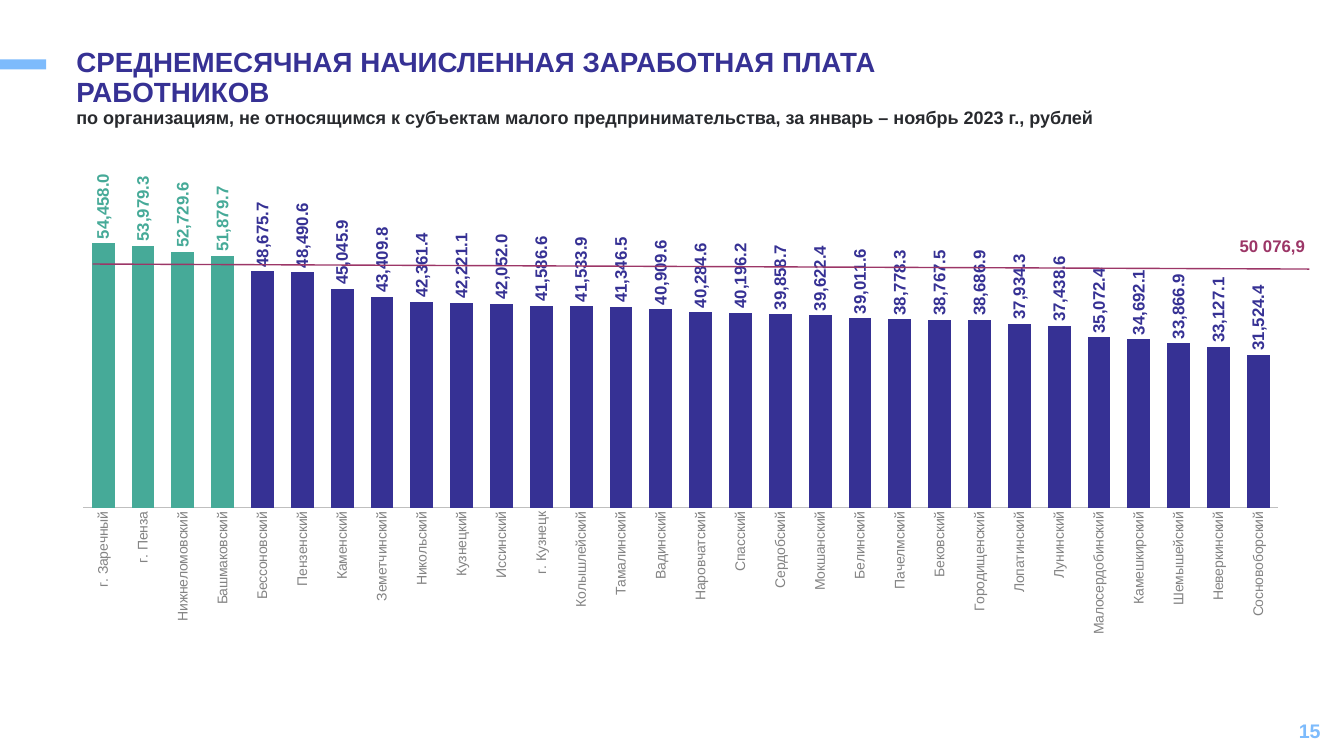
import copy

import lxml.etree
import pptx
import pptx.chart.data
import pptx.dml.color
import pptx.enum.chart
import pptx.enum.shapes
import pptx.enum.text
import pptx.oxml
import pptx.oxml.ns
import pptx.util

Pt = pptx.util.Pt
qn = pptx.oxml.ns.qn

FONT = "Arial"
INDIGO = "363194"
GREEN = "46AA98"
SKY = "7DBBFC"
PLUM = "9C3667"
DARK = "282A2E"
ABOVE_AVERAGE = 4

WAGES = [
    ("г. Заречный", 54458.0), ("г. Пенза", 53979.3),
    ("Нижнеломовский", 52729.6), ("Башмаковский", 51879.7),
    ("Бессоновский", 48675.7), ("Пензенский", 48490.6),
    ("Каменский", 45045.9), ("Земетчинский", 43409.8),
    ("Никольский", 42361.4), ("Кузнецкий", 42221.1),
    ("Иссинский", 42052.0), ("г. Кузнецк", 41586.6),
    ("Колышлейский", 41533.9), ("Тамалинский", 41346.5),
    ("Вадинский", 40909.6), ("Наровчатский", 40284.6),
    ("Спасский", 40196.2), ("Сердобский", 39858.7),
    ("Мокшанский", 39622.4), ("Белинский", 39011.6),
    ("Пачелмский", 38778.3), ("Бековский", 38767.5),
    ("Городищенский", 38686.9), ("Лопатинский", 37934.3),
    ("Лунинский", 37438.6), ("Малосердобинский", 35072.4),
    ("Камешкирский", 34692.1), ("Шемышейский", 33866.9),
    ("Неверкинский", 33127.1), ("Сосновоборский", 31524.4),
]


def rgb(color):
    return pptx.dml.color.RGBColor.from_string(color)


def paint(fill, color):
    fill.solid()
    fill.fore_color.rgb = rgb(color)


def style_font(font, size, color, bold=False):
    font.name = FONT
    font.size = Pt(size)
    font.bold = bold
    font.color.rgb = rgb(color)


def add_text(slide, box, text, size, color, line_spacing=None,
             align=pptx.enum.text.PP_ALIGN.LEFT,
             anchor=pptx.enum.text.MSO_ANCHOR.TOP, wrap=True):
    shape = slide.shapes.add_textbox(*map(Pt, box))
    frame = shape.text_frame
    frame.word_wrap = wrap
    frame.vertical_anchor = anchor
    paragraph = frame.paragraphs[0]
    paragraph.text = text
    paragraph.alignment = align
    paragraph.line_spacing = line_spacing
    style_font(paragraph.font, size, color, bold=True)


def add_accent(slide, box, color):
    shape = slide.shapes.add_shape(
        pptx.enum.shapes.MSO_SHAPE.RECTANGLE, *map(Pt, box))
    shape.shadow.inherit = False
    paint(shape.fill, color)
    shape.line.fill.background()


def add_line(slide, ends, color, width):
    connector = slide.shapes.add_connector(
        pptx.enum.shapes.MSO_CONNECTOR.STRAIGHT, *map(Pt, ends))
    connector.line.color.rgb = rgb(color)
    connector.line.width = Pt(width)
    lxml.etree.SubElement(connector._element.spPr, qn("a:effectLst"))


def turn_upright(element):
    """Rotate the chart text inside the element to read upwards."""
    for body in element.iter(qn("a:bodyPr")):
        body.set("rot", "-5400000")
        body.set("vert", "horz")


def set_plot_layout(chart, x, y, width, height):
    plot_area = chart._chartSpace.chart.plotArea
    for old_layout in plot_area.findall(qn("c:layout")):
        plot_area.remove(old_layout)
    layout = lxml.etree.Element(qn("c:layout"))
    manual = lxml.etree.SubElement(layout, qn("c:manualLayout"))
    settings = [("layoutTarget", "inner"), ("xMode", "edge"), ("yMode", "edge"),
                ("x", x), ("y", y), ("w", width), ("h", height)]
    for tag, value in settings:
        lxml.etree.SubElement(manual, qn("c:" + tag)).set("val", str(value))
    plot_area.insert(0, layout)


def style_labels(plot, series):
    position = pptx.enum.chart.XL_LABEL_POSITION.OUTSIDE_END
    labels = series.data_labels
    labels.show_value = True
    labels.number_format = "#,##0.0"
    labels.number_format_is_linked = False
    labels.position = position
    style_font(labels.font, 12, INDIGO, bold=True)

    # Districts above the average stand out in green
    for index in range(ABOVE_AVERAGE):
        point = series.points[index]
        paint(point.format.fill, GREEN)
        style_font(point.data_label.font, 12, GREEN, bold=True)
        point.data_label.position = position
    number_format = labels._element.find(qn("c:numFmt"))
    for label in labels._element.findall(qn("c:dLbl")):
        label.find(qn("c:idx")).addnext(copy.deepcopy(number_format))
    turn_upright(labels._element)


def add_wage_chart(slide, box):
    data = pptx.chart.data.CategoryChartData(number_format="#,##0.0")
    data.categories = [district for district, wage in WAGES]
    data.add_series("Series 1", [wage for district, wage in WAGES])
    chart = slide.shapes.add_chart(
        pptx.enum.chart.XL_CHART_TYPE.COLUMN_CLUSTERED, *map(Pt, box), data).chart
    chart.has_legend = False
    chart.has_title = False
    style_font(chart.font, 10, DARK)
    set_plot_layout(chart, 0, 0.11, 1, 0.57)

    # Columns
    plot = chart.plots[0]
    plot.gap_width = 75
    plot.vary_by_categories = False
    series = plot.series[0]
    series.invert_if_negative = False
    paint(series.format.fill, INDIGO)
    style_labels(plot, series)

    # Axes
    value_axis = chart.value_axis
    value_axis.minimum_scale = 0
    value_axis.maximum_scale = 60000
    value_axis.has_major_gridlines = False
    value_axis.visible = False
    category_axis = chart.category_axis
    category_axis.major_tick_mark = pptx.enum.chart.XL_TICK_MARK.NONE
    category_axis.format.line.color.rgb = rgb("BFBFBF")
    category_axis.format.line.width = Pt(1)
    style_font(category_axis.tick_labels.font, 10, "838383")
    turn_upright(category_axis._element)


def main():
    presentation = pptx.Presentation()
    presentation.slide_width = Pt(960)
    presentation.slide_height = Pt(540)
    slide = presentation.slides.add_slide(presentation.slide_layouts[6])

    # Accent and page number
    add_accent(slide, (0, 42.5, 33, 7), SKY)
    add_text(slide, (734.4, 507.6, 216, 28.8), "15", 14, SKY,
             align=pptx.enum.text.PP_ALIGN.RIGHT,
             anchor=pptx.enum.text.MSO_ANCHOR.MIDDLE)

    # Headings
    add_text(slide, (47.5, 31, 749.5, 41),
             "СРЕДНЕМЕСЯЧНАЯ НАЧИСЛЕННАЯ ЗАРАБОТНАЯ ПЛАТА\vРАБОТНИКОВ",
             19.8, INDIGO, line_spacing=0.9)
    add_text(slide, (47.5, 74.2, 784.8, 31.7),
             "по организациям, не относящимся к субъектам малого "
             "предпринимательства, за январь – ноябрь 2023 г., рублей",
             12.9, DARK, line_spacing=0.9)

    # Wages by district with the average line
    add_wage_chart(slide, (59, 114.5, 854.6, 365))
    add_text(slide, (878.4, 164.9, 61.2, 21.6), "50 076,9", 12, PLUM, wrap=False)
    add_line(slide, (66.2, 188.6, 935.3, 192.2), PLUM, 1)

    presentation.save("out.pptx")


if __name__ == "__main__":
    main()
